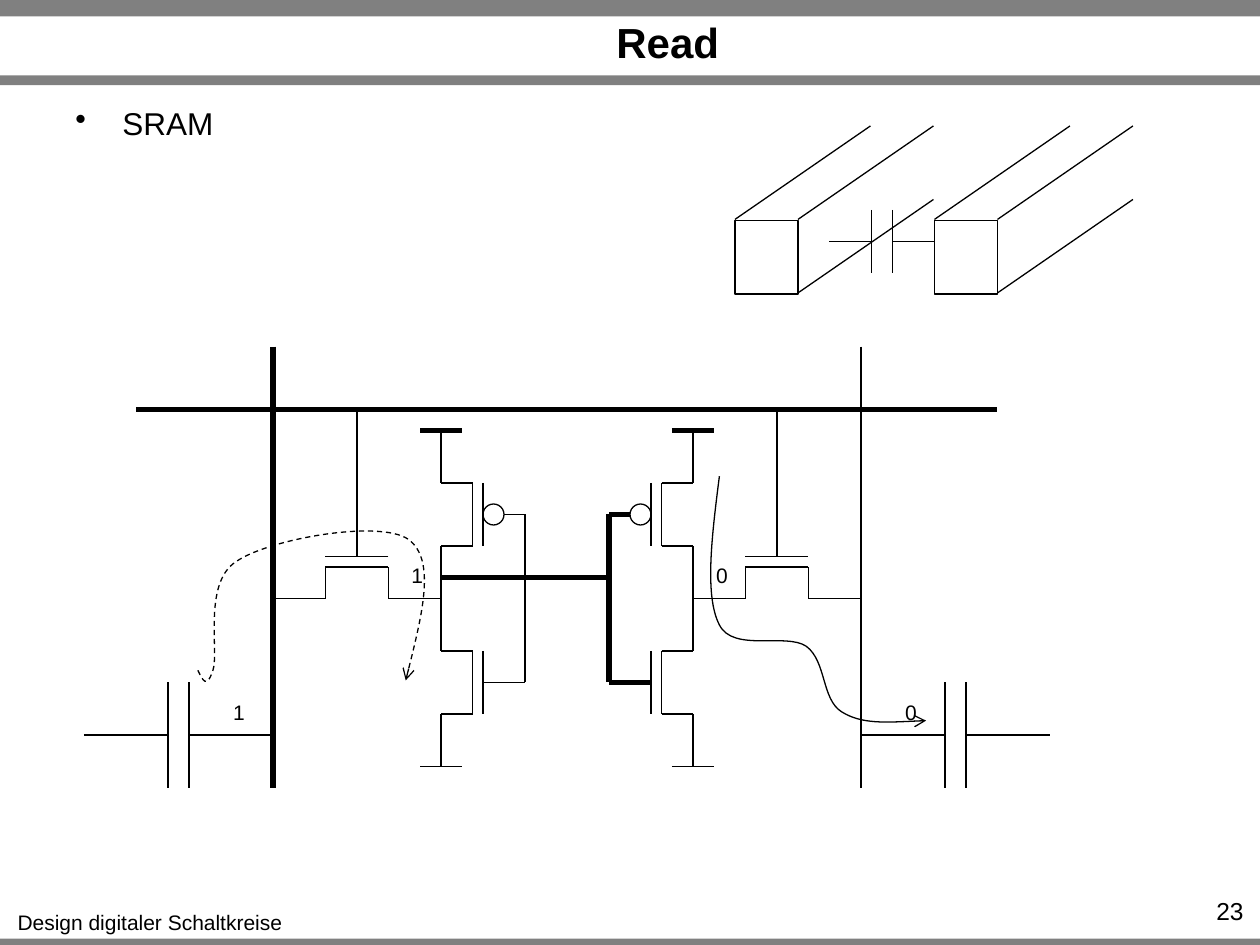
from pptx import Presentation
from pptx import util as u
from pptx.dml.color import RGBColor
from pptx.enum import dml, shapes, text
from pptx.oxml.ns import qn
from lxml import etree

COLOURS = {"ink": "000000", "band": "808080"}
THIN, HEAVY = 0.75, 3
AXIS = 54  # mirror axis of the cell, in grid steps


def grid(steps):
    """Drawing grid: twelve steps to 2.54 cm."""
    return u.Cm(steps * 2.54 / 12)


def colour(name):
    return RGBColor.from_string(COLOURS[name])


def apply(target, values):
    for name, value in values.items():
        setattr(target, name, value)


class Sketch:
    """Holds the text style and the slide being drawn."""

    def __init__(self, page):
        self.page = page
        self.font = {"name": "Arial", "bold": False}

    def outline(self, shape, weight=THIN):
        shape.line.color.rgb = colour("ink")
        shape.line.width = u.Pt(weight)

    def band(self, top, height):
        bar = self.page.shapes.add_shape(
            shapes.MSO_SHAPE.RECTANGLE, 0, u.Cm(top), u.Cm(25.4), u.Cm(height))
        bar.shadow.inherit = False
        bar.fill.solid()
        bar.fill.fore_color.rgb = colour("band")
        bar.line.fill.background()

    def label(self, words, place, size, align="CENTER", frame=None, bullet=False, **font):
        box = self.page.shapes.add_textbox(*place)
        apply(box.text_frame, {"word_wrap": True, **(frame or {})})
        para = box.text_frame.paragraphs[0]
        para.alignment = getattr(text.PP_ALIGN, align)
        span = para.add_run()
        span.text = words
        if bullet:
            props = para._p.get_or_add_pPr()
            indent = u.Cm(0.95)
            props.set("marL", str(indent))
            props.set("indent", str(-indent))
            etree.SubElement(props, qn("a:buChar")).set("char", "•")
        apply(span.font, {**self.font, "size": u.Pt(size), **font})
        span.font.color.rgb = colour("ink")

    def digit(self, words, x, y):
        self.label(words, (grid(x), grid(y), u.Cm(0.74), u.Cm(0.76)), 12,
                   frame={"word_wrap": False})

    def wire(self, x1, y1, x2, y2, weight=THIN):
        line = self.page.shapes.add_connector(
            shapes.MSO_CONNECTOR.STRAIGHT, *map(grid, (x1, y1, x2, y2)))
        self.outline(line, weight)
        etree.SubElement(line._element.spPr, qn("a:effectLst"))

    def hollow(self, kind, *place):
        shape = self.page.shapes.add_shape(kind, *map(grid, place))
        shape.shadow.inherit = False
        shape.fill.background()
        self.outline(shape)

    def capacitor(self, x, y, lead, half):
        for start, plate in ((x, x + lead), (x + 2 * lead + 2, x + lead + 2)):
            self.wire(start, y, plate, y)
            self.wire(plate, y - half, plate, y + half)

    def conductor(self, x):
        """Block conductor running away from the viewer."""
        self.hollow(shapes.MSO_SHAPE.RECTANGLE, x, 21, 6, 7)
        for left, low in ((x, 20.9), (x + 6, 20.9), (x + 6, 27.9)):
            self.wire(left, low, left + 12.9, low - 8.9)

    def half_cell(self, side):
        """Inverter and access transistor; side is 1 (right) or -1 (left)."""
        def wire(x1, y1, x2, y2, weight=THIN):
            self.wire(AXIS + side * x1, y1, AXIS + side * x2, y2, weight)

        for top, gate_end in ((46, 6), (62, 8)):
            bottom, middle = top + 6, top + 3
            wire(9, top, 9, bottom)
            wire(8, top, 8, bottom)
            wire(9, top, 12, top)
            wire(9, bottom, 12, bottom)
            wire(gate_end, middle, 4, middle)
        for start, end in ((41, 46), (52, 57), (57, 62), (68, 73)):
            wire(12, start, 12, end)
        wire(4, 49, 4, 65)
        wire(10, 73, 14, 73)
        wire(10, 41, 14, 41, HEAVY)
        self.hollow(shapes.MSO_SHAPE.OVAL, AXIS + side * 7 - 1, 48, 2, 2)

        for level in (53, 54):
            wire(17, level, 23, level)
        for channel, terminal in ((17, 12), (23, 28)):
            wire(channel, 54, channel, 57)
            wire(channel, 57, terminal, 57)
        wire(20, 53, 20, 39)

    def flow(self, points, dashed=False):
        """Arrow along cubic curves; points are in steps of 0.0254 cm."""
        builder = self.page.shapes.build_freeform(*points[0], scale=u.Cm(0.0254))
        builder.add_line_segments(points[1:], close=False)
        arrow = builder.convert_to_shape()
        arrow.shadow.inherit = False
        arrow.fill.background()
        self.outline(arrow)
        if dashed:
            arrow.line.dash_style = dml.MSO_LINE.DASH
        outline = arrow._element.spPr.find(qn("a:ln"))
        etree.SubElement(outline, qn("a:tailEnd")).set("type", "arrow")
        track = next(arrow._element.iter(qn("a:path")))
        segments = track.findall(qn("a:lnTo"))
        for first in range(0, len(segments), 3):
            curve = etree.SubElement(track, qn("a:cubicBezTo"))
            for segment in segments[first:first + 3]:
                curve.append(segment[0])
                track.remove(segment)


def main():
    deck = Presentation()
    apply(deck, {"slide_width": u.Cm(25.4), "slide_height": u.Cm(19.05)})
    sketch = Sketch(deck.slides.add_slide(deck.slide_layouts[6]))

    for top, height in ((18.92, 0.13), (0, 0.33), (1.52, 0.2)):
        sketch.band(top, height)
    sketch.label("Design digitaler Schaltkreise", map(u.Cm, (0.08, 18.21, 5.89, 0.76)),
                 12, frame={"word_wrap": False})
    sketch.label("Read", map(u.Cm, (3.3, 0.36, 20.32, 0.97)), 24, bold=True,
                 frame={"vertical_anchor": text.MSO_ANCHOR.MIDDLE})
    sketch.label("SRAM", map(u.Cm, (1.27, 1.98, 22.86, 1.68)), 18, "LEFT", bullet=True)
    sketch.label("23", map(u.Cm, (23.11, 17.93, 2.21, 0.61)), 14, "RIGHT")

    bit_lines_and_word_line = (
        (82, 33, 82, 75, THIN), (13, 39, 95, 39, HEAVY), (26, 33, 26, 75, HEAVY))
    for line in bit_lines_and_word_line:
        sketch.wire(*line)
    for side in (1, -1):
        sketch.half_cell(side)
    for x, y, lead, half in ((82, 70, 8, 5), (8, 70, 8, 5), (79, 23, 4, 3)):
        sketch.capacitor(x, y, lead, half)
    for x in (89, 70):
        sketch.conductor(x)

    for words, x, y in (("0", 67, 53), ("1", 38, 53), ("1", 21, 66), ("0", 85, 66)):
        sketch.digit(words, x, y)

    sketch.flow([(571, 378), (565, 425), (559, 473), (571, 496),
                 (582, 518), (624, 502), (640, 513),
                 (656, 525), (652, 555), (668, 565),
                 (684, 575), (709, 573), (735, 572)])
    sketch.flow([(157, 532), (161, 540), (164, 547), (169, 532),
                 (174, 518), (161, 463), (187, 446),
                 (212, 428), (301, 412), (324, 428),
                 (346, 444), (334, 492), (322, 540)], dashed=True)

    driven_gate = ((62, 65, 58, 65), (60, 49, 58, 49), (58, 49, 58, 65), (42, 55, 58, 55))
    for line in driven_gate:
        sketch.wire(*line, HEAVY)

    deck.save("out.pptx")


if __name__ == "__main__":
    main()
